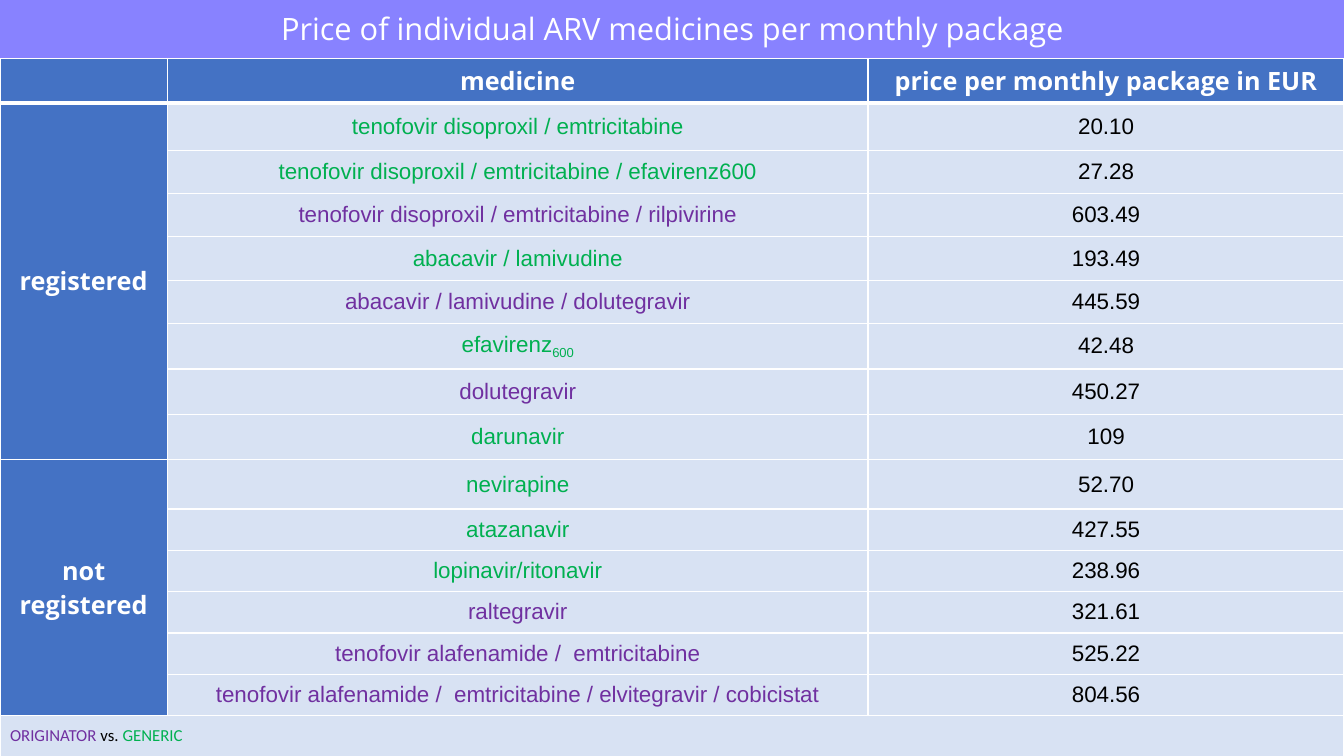
"""Build a slide with a price table of ARV medicines."""
from pptx import Presentation
from pptx.dml.color import RGBColor
from pptx.enum import text
from pptx.oxml import parse_xml
from pptx.oxml.ns import nsdecls
from pptx.util import Inches, Pt

LILAC = RGBColor(0x88, 0x82, 0xFF)
WHITE = RGBColor(0xFF, 0xFF, 0xFF)
BLACK = RGBColor(0, 0, 0)
BLUE = RGBColor(0x44, 0x72, 0xC4)
PALE = RGBColor(0xD8, 0xE2, 0xF3)
GREEN = RGBColor(0, 0xB0, 0x50)
PURPLE = RGBColor(0x70, 0x30, 0xA0)
MID = text.MSO_ANCHOR.MIDDLE
TOP = text.MSO_ANCHOR.TOP
CENTER = text.PP_ALIGN.CENTER
LEFT = text.PP_ALIGN.LEFT

HEAD = {"name": "Open Sans", "size": Pt(18), "bold": True}
BODY = {"name": "Arial", "size": Pt(16), "bold": False}
NOTE = {"name": "Calibri", "size": Pt(12), "bold": False}
TITLE = {"name": "Open Sans", "size": Pt(22), "bold": False}

GROUPS = [
    ("registered", [
        ("tenofovir disoproxil / emtricitabine", GREEN, "20.10"),
        ("tenofovir disoproxil / emtricitabine / efavirenz600", GREEN, "27.28"),
        ("tenofovir disoproxil / emtricitabine / rilpivirine", PURPLE, "603.49"),
        ("abacavir / lamivudine", GREEN, "193.49"),
        ("abacavir / lamivudine / dolutegravir", PURPLE, "445.59"),
        ("efavirenz", GREEN, "42.48"),
        ("dolutegravir", PURPLE, "450.27"),
        ("darunavir", GREEN, "109"),
    ]),
    ("not registered", [
        ("nevirapine", GREEN, "52.70"),
        ("atazanavir", GREEN, "427.55"),
        ("lopinavir/ritonavir", GREEN, "238.96"),
        ("raltegravir", PURPLE, "321.61"),
        ("tenofovir alafenamide /  emtricitabine", PURPLE, "525.22"),
        ("tenofovir alafenamide /  emtricitabine / elvitegravir / cobicistat",
         PURPLE, "804.56"),
    ]),
]
WIDTHS = [1.66, 6.95, 4.72]
HEIGHTS = [0.41, 0.47] + [0.43] * 4 + [0.45] * 3 + [0.49] + [0.41] * 6


def write(frame, runs, form, align=CENTER):
    para = frame.paragraphs[0]
    para.alignment = align
    for words, color in runs:
        run = para.add_run()
        run.text = words
        run.font.color.rgb = color
        for key, value in form.items():
            setattr(run.font, key, value)
    return para


def paint(cell, color, top=1, bottom=1):
    props = cell._tc.get_or_add_tcPr()
    for side, width in zip("LRTB", (1, 1, top, bottom)):
        props.append(parse_xml(
            f'<a:ln{side} {nsdecls("a")} w="{Pt(width)}"><a:solidFill>'
            f'<a:srgbClr val="{WHITE}"/></a:solidFill></a:ln{side}>'))
    cell.fill.solid()
    cell.fill.fore_color.rgb = color


deck = Presentation()
deck.slide_width, deck.slide_height = Inches(13.33), Inches(7.5)
slide = deck.slides.add_slide(deck.slide_layouts[5])
slide.background.fill.solid()
slide.background.fill.fore_color.rgb = LILAC

title = slide.shapes.title
title.left, title.top = Inches(0.92), Inches(0.1)
title.width, title.height = Inches(11.5), Inches(0.41)
title.text_frame.vertical_anchor = MID
line = write(title.text_frame,
             [("Price of individual ARV medicines per monthly package", WHITE)], TITLE)
line.line_spacing = 0.9

last = len(HEIGHTS) - 1
table = slide.shapes.add_table(
    len(HEIGHTS), len(WIDTHS), 0, Inches(0.58),
    Inches(sum(WIDTHS)), Inches(sum(HEIGHTS))).table
for col, width in zip(table.columns, WIDTHS):
    col.width = Inches(width)
for row, height in zip(table.rows, HEIGHTS):
    row.height = Inches(height)
for r in range(len(HEIGHTS)):
    for c in range(len(WIDTHS)):
        cell = table.cell(r, c)
        cell.vertical_anchor = MID if r else TOP
        dark = r == 0 or (c == 0 and r < last)
        paint(cell, BLUE if dark else PALE,
              top=3 if r == 1 else 1, bottom=1 if r else 3)

for c, label in enumerate(["medicine", "price per monthly package in EUR"], 1):
    write(table.cell(0, c).text_frame, [(label, WHITE)], HEAD)

r = 1
for group, drugs in GROUPS:
    side = table.cell(r, 0)
    side.merge(table.cell(r + len(drugs) - 1, 0))
    write(side.text_frame, [(group, WHITE)], HEAD)
    for drug, color, price in drugs:
        para = write(table.cell(r, 1).text_frame, [(drug, color)], BODY)
        if drug == "efavirenz":
            write(table.cell(r, 1).text_frame, [("600", color)], BODY)
            para.runs[1].font._element.set("baseline", "-25000")
        write(table.cell(r, 2).text_frame, [(price, BLACK)], BODY)
        r += 1

foot = table.cell(last, 0)
foot.merge(table.cell(last, 2))
write(foot.text_frame,
      [("ORIGINATOR ", PURPLE), ("vs. ", BLACK), ("GENERIC", GREEN)], NOTE, LEFT)

deck.save("out.pptx")
